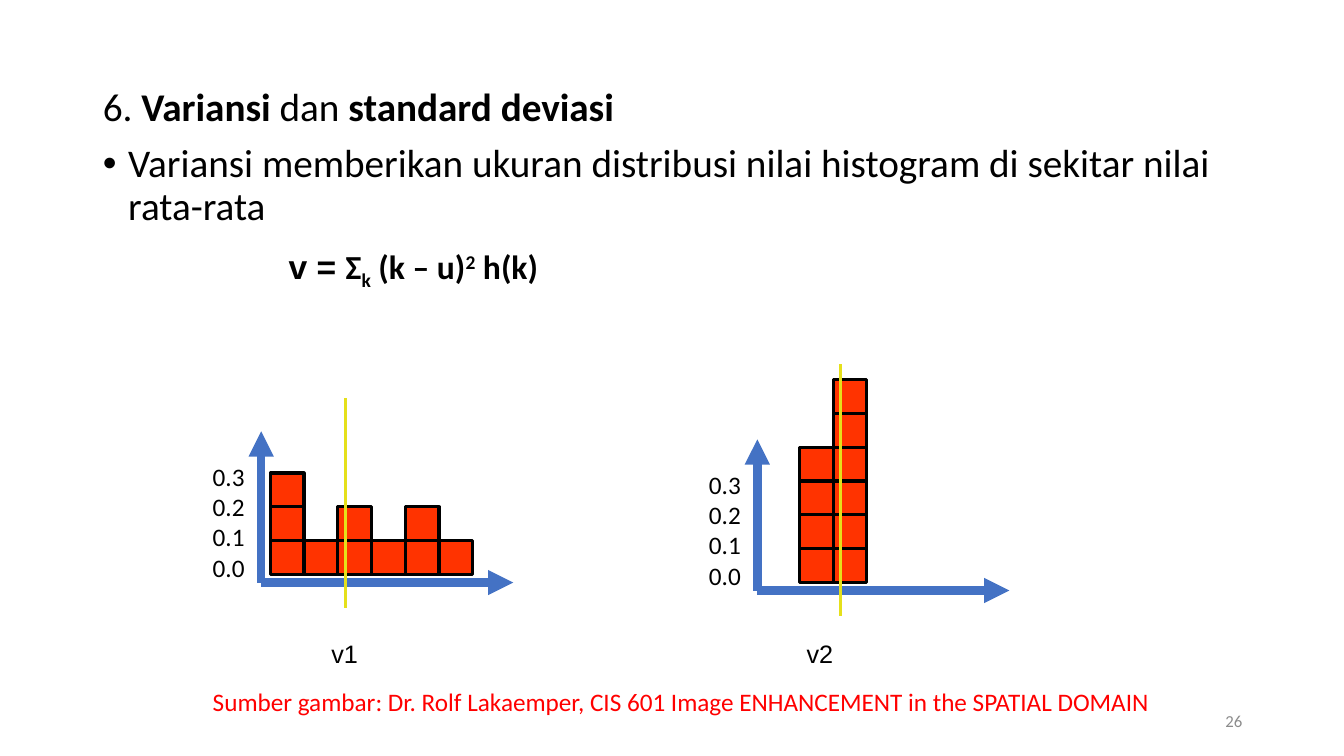
from lxml import etree
from pptx import Presentation
from pptx import util as u
from pptx.dml.color import RGBColor
from pptx.enum import shapes, text
from pptx.oxml.ns import qn

BLACK = RGBColor(0x00, 0x00, 0x00)
RED = RGBColor(0xFF, 0x00, 0x00)
GRAY = RGBColor(0x8C, 0x8C, 0x8C)
BAR_RED = RGBColor(0xFF, 0x33, 0x00)
AXIS_BLUE = RGBColor(0x44, 0x72, 0xC4)
MEAN_YELLOW = RGBColor(0xE5, 0xE0, 0x1B)

CELL = 0.85
GAP = 0.21


def add_box(page, left, top, width, height, wrap=True):
    box = page.shapes.add_textbox(u.Cm(left), u.Cm(top), u.Cm(width), u.Cm(height))
    box.text_frame.word_wrap = wrap
    return box.text_frame


def write(para, words, size=18, font="Calibri", color=BLACK, bold=False, baseline=0):
    span = para.add_run()
    span.text = words
    span.font.size = u.Pt(size)
    span.font.name = font
    span.font.color.rgb = color
    span.font.bold = bold
    if baseline:
        span.font._element.set("baseline", str(baseline * 1000))


deck = Presentation()
deck.slide_width = u.Inches(13.33)
deck.slide_height = u.Inches(7.5)
page = deck.slides.add_slide(deck.slide_layouts[6])

body = add_box(page, 2.34, 2.08, 29.21, 15.09)
heading = body.paragraphs[0]
heading.line_spacing = 0.9
for words, bold in [("6. ", False), ("Variansi", True), (" dan ", False),
                    ("standard deviasi", True)]:
    write(heading, words, size=28, bold=bold)

bullet = body.add_paragraph()
bullet.line_spacing = 0.9
bullet.space_before = u.Pt(10)
properties = bullet._p.get_or_add_pPr()
properties.set("marL", str(u.Cm(0.64)))
properties.set("indent", str(u.Cm(-0.64)))
etree.SubElement(properties, qn("a:buFont")).set("typeface", "Arial")
etree.SubElement(properties, qn("a:buChar")).set("char", "•")
write(bullet, "Variansi memberikan ukuran distribusi nilai histogram di sekitar nilai rata-rata",
      size=28)

formula = add_box(page, 6.73, 6.07, 7.37, 1.27, wrap=False).paragraphs[0]
formula.alignment = text.PP_ALIGN.CENTER
for words, font, baseline in [("v = ", "Arial", 0), ("Σ", "Calibri", 0),
                              ("k", "Calibri", -25), (" (k – u)", "Calibri", 0),
                              ("2", "Calibri", 30), (" h(k)", "Calibri", 0)]:
    write(formula, words, size=24, font=font, bold=True, baseline=baseline)

histograms = [
    ("v1", 8.1, 6.58, 14.68, 6.81, [3, 1, 2, 1, 2, 1], 8.71, 10.03),
    ("v2", 20.07, 19.08, 14.88, 20.14, [4, 6], 21.18, 9.17),
]
for name, name_left, axis_x, axis_y, bars_left, counts, mean_x, mean_top in histograms:
    for column, count in enumerate(counts):
        for row in range(count):
            cell = page.shapes.add_shape(
                shapes.MSO_SHAPE.RECTANGLE,
                u.Cm(bars_left + column * CELL),
                u.Cm(axis_y - GAP - (row + 1) * CELL),
                u.Cm(CELL), u.Cm(CELL))
            cell.shadow.inherit = False
            cell.fill.solid()
            cell.fill.fore_color.rgb = BAR_RED
            cell.line.color.rgb = BLACK
            cell.line.width = u.Pt(2.25)

    labels = add_box(page, axis_x - 1.47, axis_y - 3.18, 1.32, 3.33, wrap=False)
    for index, value in enumerate(["0.3", "0.2", "0.1", "0.0"]):
        para = labels.add_paragraph() if index else labels.paragraphs[0]
        write(para, value)

    lines = [
        (axis_x, axis_y, axis_x, axis_y - 3.81, AXIS_BLUE, 6, True),
        (axis_x, axis_y, axis_x + 6.35, axis_y, AXIS_BLUE, 6, True),
        (mean_x, axis_y + 0.64, mean_x, mean_top, MEAN_YELLOW, 2.25, False),
    ]
    for x1, y1, x2, y2, color, width, arrow in lines:
        line = page.shapes.add_connector(
            shapes.MSO_CONNECTOR.STRAIGHT, u.Cm(x1), u.Cm(y1), u.Cm(x2), u.Cm(y2))
        line.line.color.rgb = color
        line.line.width = u.Pt(width)
        if arrow:
            etree.SubElement(line.line._get_or_add_ln(), qn("a:tailEnd")).set("type", "triangle")
        etree.SubElement(line._element.spPr, qn("a:effectLst"))

    write(add_box(page, name_left, 15.95, 1.5, 1.02).paragraphs[0], name, font="Arial")

credit = add_box(page, 5.11, 17.17, 28.45, 1.8).paragraphs[0]
write(credit, "Sumber gambar: Dr. Rolf Lakaemper, CIS 601 Image ENHANCEMENT in the SPATIAL DOMAIN",
      color=RED)

number_frame = add_box(page, 23.93, 17.65, 7.62, 1.02)
number_frame.vertical_anchor = text.MSO_ANCHOR.MIDDLE
number = number_frame.paragraphs[0]
number.alignment = text.PP_ALIGN.RIGHT
write(number, "26", size=12, color=GRAY)

deck.save("out.pptx")
